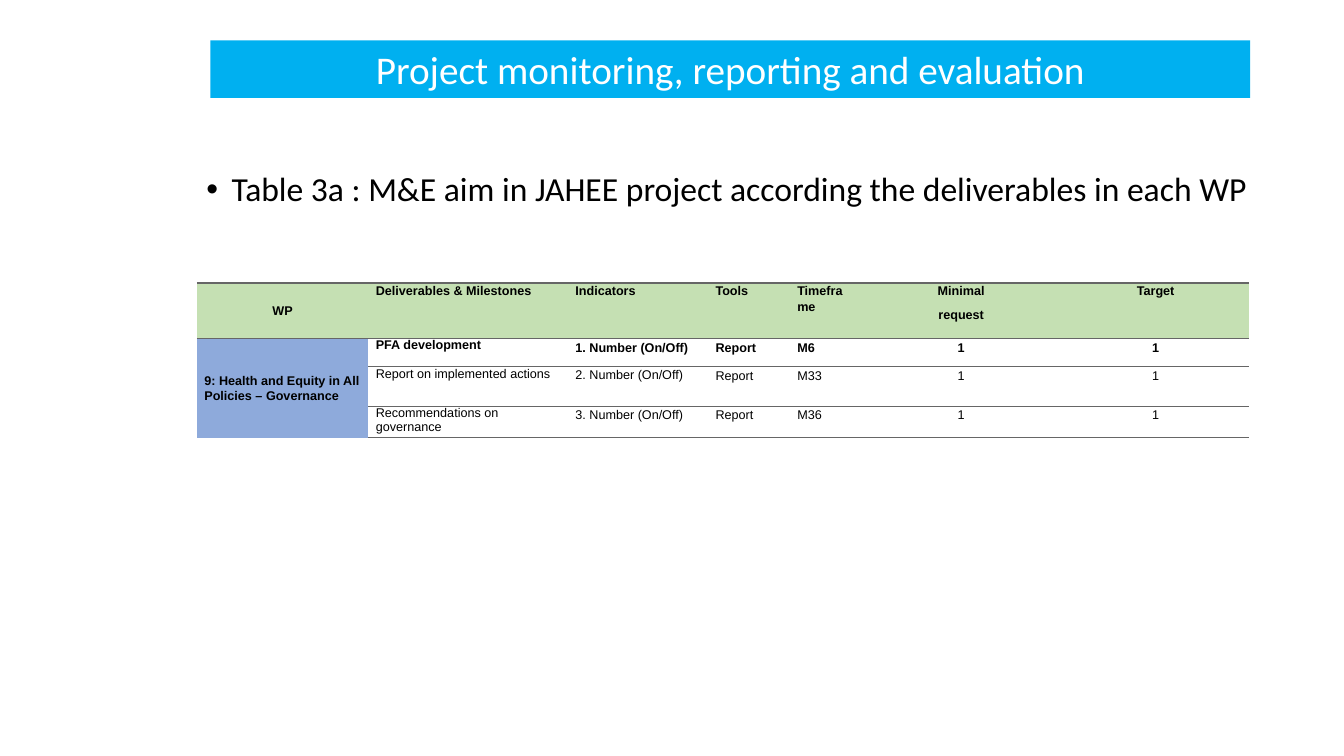
from dataclasses import dataclass

from lxml import etree
from pptx import Presentation
from pptx.dml.color import RGBColor
from pptx.enum.text import MSO_ANCHOR, MSO_AUTO_SIZE, PP_ALIGN
from pptx.oxml.ns import qn
from pptx.util import Cm, Pt

LEFT, CENTER = PP_ALIGN.LEFT, PP_ALIGN.CENTER
TOP, MIDDLE = MSO_ANCHOR.TOP, MSO_ANCHOR.MIDDLE
NO_AUTOFIT = MSO_AUTO_SIZE.NONE

WHITE = RGBColor(0xFF, 0xFF, 0xFF)
BLACK = RGBColor(0x00, 0x00, 0x00)
TITLE_BLUE = RGBColor(0x00, 0xB0, 0xF0)
HEADER_GREEN = RGBColor(0xC5, 0xE0, 0xB3)
PACKAGE_BLUE = RGBColor(0x8E, 0xAA, 0xDB)
RULE_GREY = RGBColor(0x66, 0x66, 0x66)

LAYOUT_TITLE_ONLY = 5
ROW_HEIGHTS = (1.4, 0.71, 1.0, 0.79)


@dataclass(frozen=True)
class Column:
    heading: str
    width: float
    entries: tuple[str, str, str]
    alignment: PP_ALIGN = LEFT


COLUMNS = (
    Column("WP", 4.32, ("9: Health and Equity in All Policies – Governance", "", "")),
    Column("Deliverables & Milestones", 5.03,
           ("PFA development", "Report on implemented actions",
            "Recommendations on governance")),
    Column("Indicators", 3.53,
           ("1. Number (On/Off)", "2. Number (On/Off)", "3. Number (On/Off)")),
    Column("Tools", 2.06, ("Report", "Report", "Report")),
    Column("Timeframe", 1.78, ("Μ6", "Μ33", "M36")),
    Column("Minimal\nrequest", 5.08, ("1", "1", "1"), CENTER),
    Column("Target", 4.72, ("1", "1", "1"), CENTER),
)


def add_title(slide) -> None:
    title = slide.shapes.title
    title.left, title.top, title.width, title.height = Cm(5.3), Cm(1.02), Cm(26.2), Cm(1.45)
    title.fill.solid()
    title.fill.fore_color.rgb = TITLE_BLUE
    frame = title.text_frame
    frame.text = "Project monitoring, reporting and evaluation"
    frame.auto_size = NO_AUTOFIT
    frame.vertical_anchor = MIDDLE
    paragraph = frame.paragraphs[0]
    paragraph.alignment = CENTER
    paragraph.font.name = "Calibri"
    paragraph.font.size = Pt(28)
    paragraph.font.color.rgb = WHITE


def add_caption(slide) -> None:
    box = slide.shapes.add_textbox(Cm(4.95), Cm(4.22), Cm(27.1), Cm(13.3))
    frame = box.text_frame
    frame.word_wrap = True
    paragraph = frame.paragraphs[0]
    paragraph.text = "Table 3a : M&E aim in JAHEE project according the deliverables in each WP"
    paragraph.line_spacing = 0.9
    properties = paragraph._p.get_or_add_pPr()
    properties.set("marL", str(Cm(0.635)))
    properties.set("indent", str(-Cm(0.635)))
    etree.SubElement(properties, qn("a:buFont"), typeface="Arial")
    etree.SubElement(properties, qn("a:buChar"), char="•")
    paragraph.font.name = "Calibri"
    paragraph.font.size = Pt(24)
    paragraph.font.color.rgb = BLACK


def set_border(cell, side: str, width: float) -> None:
    """Draw one cell edge; a width of zero hides it."""
    line = etree.SubElement(cell._tc.get_or_add_tcPr(), qn(f"a:ln{side}"), w=str(Pt(width)))
    if width:
        fill = etree.SubElement(line, qn("a:solidFill"))
        etree.SubElement(fill, qn("a:srgbClr"), val=str(RULE_GREY))
    else:
        etree.SubElement(line, qn("a:noFill"))


def format_cell(cell, row: int, column: int) -> None:
    is_header, is_package = row == 0, column == 0
    cell.margin_left = cell.margin_right = Cm(0.19)
    cell.margin_top = cell.margin_bottom = 0
    cell.vertical_anchor = MIDDLE if is_package else TOP

    # Horizontal rules only; the merged package cell has none inside
    last_row = len(ROW_HEIGHTS) - 1
    rules = [0 if is_package and 1 < edge <= last_row else 1
             for edge in (row, row + 1)]
    for side, width in zip("LRTB", [0, 0, *rules]):
        set_border(cell, side, width)

    if is_header or is_package:
        cell.fill.solid()
        cell.fill.fore_color.rgb = HEADER_GREEN if is_header else PACKAGE_BLUE
    else:
        cell.fill.background()

    centred = COLUMNS[column].alignment == CENTER or (is_header and is_package)
    indicator_below_first = column == 2 and row > 1
    for paragraph in cell.text_frame.paragraphs:
        paragraph.alignment = CENTER if centred else LEFT
        if is_header or is_package or indicator_below_first:
            paragraph.line_spacing = 1.1
            paragraph.space_after = Pt(6)
        else:
            paragraph.line_spacing = 1.0 if column == 1 else 1.15
        paragraph.font.name = "Arial"
        paragraph.font.size = Pt(9)
        paragraph.font.bold = row <= 1
        paragraph.font.color.rgb = BLACK


def add_deliverables_table(slide) -> None:
    frame = slide.shapes.add_table(
        len(ROW_HEIGHTS), len(COLUMNS), Cm(4.96), Cm(7.13),
        Cm(sum(column.width for column in COLUMNS)), Cm(sum(ROW_HEIGHTS)))
    table = frame.table
    table.first_row = table.horz_banding = False
    for row, height in enumerate(ROW_HEIGHTS):
        table.rows[row].height = Cm(height)
    for index, column in enumerate(COLUMNS):
        table.columns[index].width = Cm(column.width)
        for row, text in enumerate((column.heading, *column.entries)):
            cell = table.cell(row, index)
            cell.text = text
            format_cell(cell, row, index)
    table.cell(1, 0).merge(table.cell(3, 0))


def main() -> None:
    presentation = Presentation()
    presentation.slide_width, presentation.slide_height = Cm(33.867), Cm(19.05)
    slide = presentation.slides.add_slide(presentation.slide_layouts[LAYOUT_TITLE_ONLY])
    add_title(slide)
    add_caption(slide)
    add_deliverables_table(slide)
    presentation.save("out.pptx")


if __name__ == "__main__":
    main()
